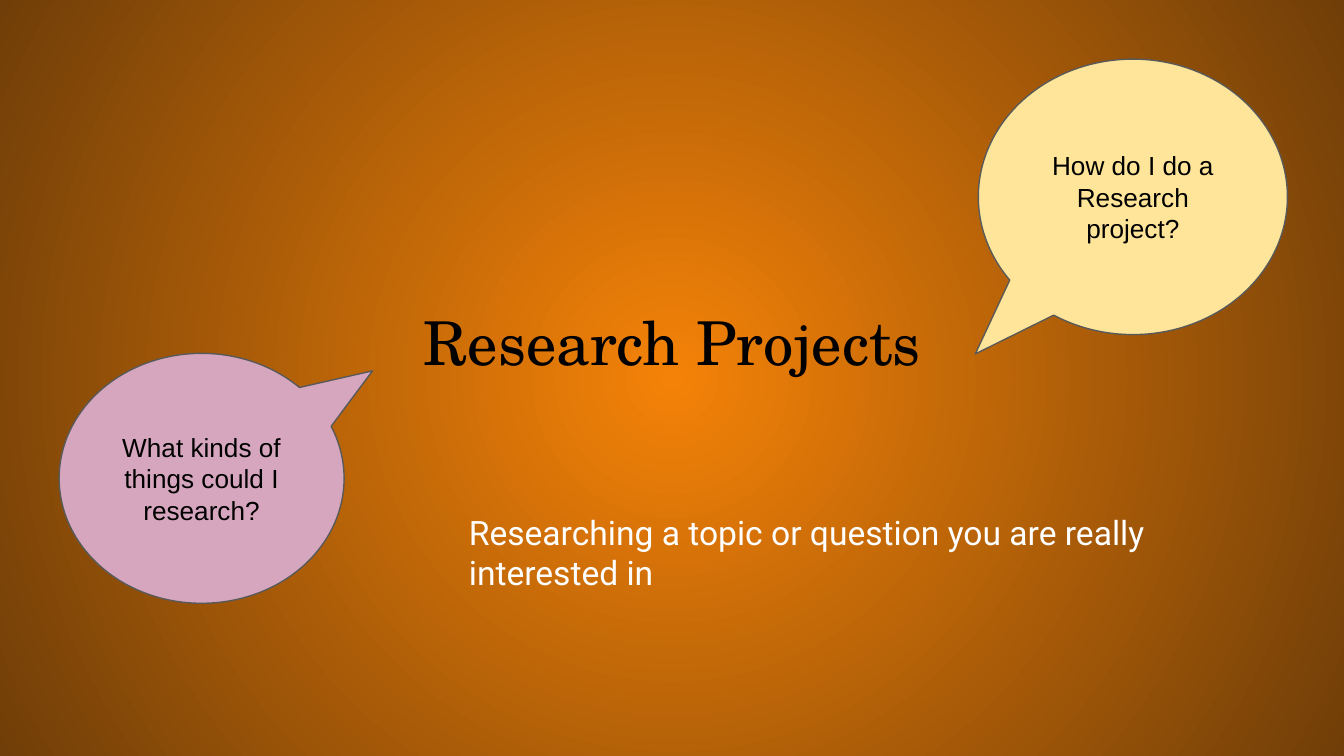
import pptx
import pptx.dml.color
import pptx.enum.shapes
import pptx.enum.text
import pptx.oxml
import pptx.oxml.ns
import pptx.util
from pptx.util import Inches

ALIGN = pptx.enum.text.PP_ALIGN
ANCHOR = pptx.enum.text.MSO_ANCHOR

SLIDE_WIDTH = Inches(10)
SLIDE_HEIGHT = SLIDE_WIDTH * 9 // 16

THEME = {
    "background": ("F48208", "703E08"),
    "outline": "595959",
    "title": {"font": "TeX Gyre Schola", "size": 32.4, "color": "000000"},
    "bubble": {"font": "Arial", "size": 14, "color": "000000"},
    "summary": {"font": "Roboto", "size": 18, "color": "FFFFFF"},
}

TITLE = ("Research Projects", (0.34, 2.08, 9.32, 0.92))
SUMMARY = (
    "Researching a topic or question you are really interested in",
    (3.39, 3.71, 5.31, 1.04),
)
# Text, box, tail position relative to the bubble, fill
BUBBLES = [
    ("How do I do a Research project?", (7.28, 0.44, 2.3, 2.05), (-0.51, 0.57), "FFE599"),
    ("What kinds of things could I research?", (0.44, 2.63, 2.12, 1.86), (0.6, -0.43), "D5A6BD"),
]


def rgb(value):
    return pptx.dml.color.RGBColor.from_string(value)


def write_text(shape, text, style, alignment, anchor):
    frame = shape.text_frame
    frame.text = text
    frame.word_wrap = True
    frame.vertical_anchor = anchor
    frame.margin_left = frame.margin_right = Inches(0.1)
    frame.margin_top = frame.margin_bottom = Inches(0.1)
    paragraph = frame.paragraphs[0]
    paragraph.alignment = alignment
    font = paragraph.runs[0].font
    font.name = style["font"]
    font.size = pptx.util.Pt(style["size"])
    font.color.rgb = rgb(style["color"])


def paint_background(slide):
    """Fill the slide with a circular gradient spreading from its centre."""
    fill = slide.background.fill
    fill.gradient()
    for stop, color in zip(fill.gradient_stops, THEME["background"]):
        stop.color.rgb = rgb(color)
    gradient = slide.element.find(".//" + pptx.oxml.ns.qn("a:gradFill"))
    linear = gradient.find(pptx.oxml.ns.qn("a:lin"))
    circle = pptx.oxml.parse_xml(
        f'<a:path {pptx.oxml.ns.nsdecls("a")} path="circle">'
        '<a:fillToRect l="50000" t="50000" r="50000" b="50000"/></a:path>'
    )
    gradient.replace(linear, circle)


def add_text(slide, text, box, style, alignment, anchor):
    shape = slide.shapes.add_textbox(*map(Inches, box))
    write_text(shape, text, style, alignment, anchor)


def add_bubble(slide, text, box, tail, color):
    bubble = slide.shapes.add_shape(
        pptx.enum.shapes.MSO_SHAPE.OVAL_CALLOUT, *map(Inches, box)
    )
    bubble.adjustments[0], bubble.adjustments[1] = tail
    bubble.shadow.inherit = False
    bubble.fill.solid()
    bubble.fill.fore_color.rgb = rgb(color)
    bubble.line.color.rgb = rgb(THEME["outline"])
    bubble.line.width = pptx.util.Pt(0.75)
    write_text(bubble, text, THEME["bubble"], ALIGN.CENTER, ANCHOR.MIDDLE)


def main():
    presentation = pptx.Presentation()
    presentation.slide_width = SLIDE_WIDTH
    presentation.slide_height = SLIDE_HEIGHT
    slide = presentation.slides.add_slide(presentation.slide_layouts[6])
    paint_background(slide)
    add_text(slide, *TITLE, THEME["title"], ALIGN.CENTER, ANCHOR.MIDDLE)
    for bubble in BUBBLES:
        add_bubble(slide, *bubble)
    add_text(slide, *SUMMARY, THEME["summary"], ALIGN.LEFT, ANCHOR.TOP)
    presentation.save("out.pptx")


if __name__ == "__main__":
    main()
